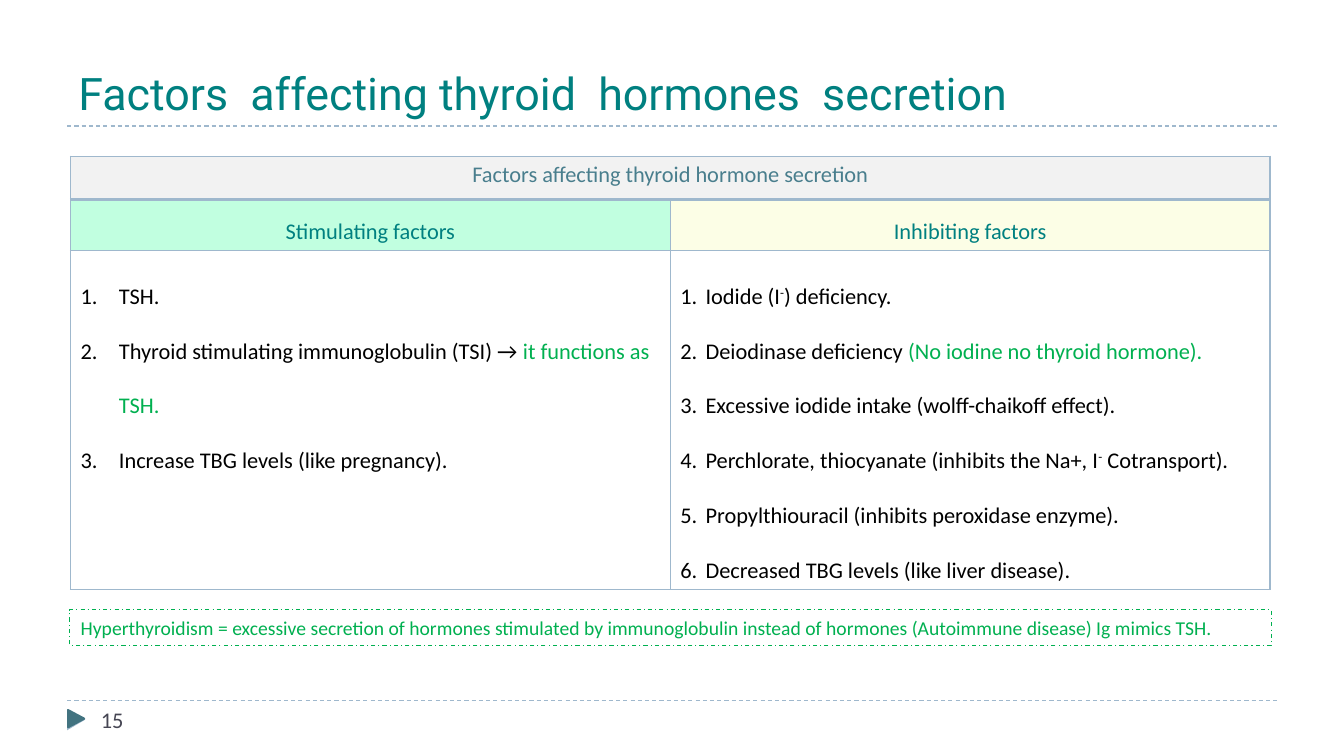
from pptx import Presentation
from pptx.dml.color import RGBColor
from pptx.enum.dml import MSO_LINE
from pptx.enum.shapes import MSO_CONNECTOR, MSO_SHAPE
from pptx.enum.text import MSO_ANCHOR, MSO_AUTO_SIZE, PP_ALIGN
from pptx.oxml.ns import qn
from pptx.util import Inches, Pt
from lxml import etree

DASH, DASH_DOT = MSO_LINE.DASH, MSO_LINE.DASH_DOT
STRAIGHT = MSO_CONNECTOR.STRAIGHT
RECTANGLE, TRIANGLE = MSO_SHAPE.RECTANGLE, MSO_SHAPE.ISOSCELES_TRIANGLE
TOP, MIDDLE, BOTTOM = MSO_ANCHOR.TOP, MSO_ANCHOR.MIDDLE, MSO_ANCHOR.BOTTOM
LEFT, CENTER = PP_ALIGN.LEFT, PP_ALIGN.CENTER

COLORS = {
    "rule": "9FB8CD", "marker": "427380", "teal": "008080", "heading": "497E8D",
    "green": "00B050", "black": "000000", "page": "464653", "white": "FFFFFF",
    "grey": "F2F2F2", "mint": "C1FFE0", "cream": "FCFEE6",
}

# The slide is a grid of 40 columns by 22.5 rows, each a third of an inch
COLUMNS, ROWS = 40, 22.5
MARGIN, CONTENT = 2, 36

# Each item is a list of spans: text, colour, superscript
STIMULATING = [
    [("TSH.",)],
    [("Thyroid stimulating immunoglobulin (TSI) → ",), ("it functions as TSH.", "green")],
    [("Increase TBG levels (like pregnancy).",)],
]
INHIBITING = [
    [("Iodide (I",), ("-", "black", True), (") deficiency.",)],
    [("Deiodinase deficiency ",), ("(No iodine no thyroid hormone).", "green")],
    [("Excessive iodide intake (wolff-chaikoff effect).",)],
    [("Perchlorate, thiocyanate (inhibits the Na+, I",), ("-", "black", True),
     (" Cotransport).",)],
    [("Propylthiouracil (inhibits peroxidase enzyme).",)],
    [("Decreased TBG levels (like liver disease).",)],
]


def grid(units):
    return Inches(units / 3)


def rgb(name):
    return RGBColor.from_string(COLORS[name])


class SlideBuilder:
    def __init__(self, page, font="Calibri", size=16):
        self.page, self.font, self.size = page, font, size

    def span(self, para, text, color="black", superscript=False, size=None, font=None):
        span = para.add_run()
        span.text = text
        span.font.name = font or self.font
        span.font.size = Pt(size or self.size)
        span.font.color.rgb = rgb(color)
        if superscript:
            span._r.get_or_add_rPr().set("baseline", "30000")

    def frame(self, frame, anchor):
        frame.word_wrap = True
        frame.vertical_anchor = anchor
        frame.margin_left = frame.margin_right = Inches(0.11)
        frame.margin_top = frame.margin_bottom = Inches(0.06)
        frame.paragraphs[0].alignment = LEFT
        return frame.paragraphs[0]

    def title(self, text, left, top, width, height):
        box = self.page.shapes.title
        box.left, box.top, box.width, box.height = map(grid, (left, top, width, height))
        para = self.frame(box.text_frame, BOTTOM)
        box.text_frame.auto_size = MSO_AUTO_SIZE.NONE
        self.span(para, text, "teal", size=32, font="Roboto")

    def rule(self, row):
        line = self.page.shapes.add_connector(
            STRAIGHT, grid(MARGIN), grid(row), grid(MARGIN + CONTENT), grid(row))
        line.line.color.rgb = rgb("rule")
        line.line.width = Pt(0.75)
        line.line.dash_style = DASH
        etree.SubElement(line._element.spPr, qn("a:effectLst"))

    def shape(self, kind, place, fill=None, line=None, width=0.75):
        shape = self.page.shapes.add_shape(kind, *map(grid, place))
        shape.shadow.inherit = False
        if fill:
            shape.fill.solid()
            shape.fill.fore_color.rgb = rgb(fill)
        else:
            shape.fill.background()
        if line:
            shape.line.color.rgb = rgb(line)
            shape.line.width = Pt(width)
        else:
            shape.line.fill.background()
        return shape

    def marker(self, place, color, line=None):
        self.shape(TRIANGLE, place, color, line, 1.5).rotation = 90

    def note(self, text, place):
        box = self.shape(RECTANGLE, place, line="green")
        box.line.dash_style = DASH_DOT
        self.span(self.frame(box.text_frame, MIDDLE), text, "green", size=14)

    def text(self, text, place, color):
        box = self.page.shapes.add_textbox(*map(grid, place))
        self.span(self.frame(box.text_frame, TOP), text, color)

    def table(self, left, top, width, heights, columns):
        holder = self.page.shapes.add_table(
            len(heights), columns, grid(left), grid(top), grid(width), grid(sum(heights)))
        table = holder.table
        table.first_row = table.horz_banding = False
        for row, height in zip(table.rows, heights):
            row.height = grid(height)
        for column in table.columns:
            column.width = grid(width / columns)
        return table

    def cell(self, cell, fill, bottom=1):
        properties = cell._tc.get_or_add_tcPr()
        for side, points in (("L", 1), ("R", 1), ("T", 1), ("B", bottom)):
            line = etree.SubElement(properties, qn(f"a:ln{side}"), w=str(Pt(points)))
            paint = etree.SubElement(line, qn("a:solidFill"))
            etree.SubElement(paint, qn("a:srgbClr"), val=COLORS["rule"])
        cell.fill.solid()
        cell.fill.fore_color.rgb = rgb(fill)

    def heading(self, cell, text, color, spacing):
        para = cell.text_frame.paragraphs[0]
        para.alignment = CENTER
        para.line_spacing = spacing
        self.span(para, text, color)

    def numbered(self, cell, items, indent):
        frame = cell.text_frame
        for index, item in enumerate(items):
            para = frame.add_paragraph() if index else frame.paragraphs[0]
            para.line_spacing = 2.0
            properties = para._p.get_or_add_pPr()
            properties.set("marL", str(Inches(indent)))
            properties.set("indent", str(-Inches(indent)))
            etree.SubElement(properties, qn("a:buFont"), typeface="+mj-lt")
            etree.SubElement(properties, qn("a:buAutoNum"), type="arabicPeriod")
            for span in item:
                self.span(para, *span)


def main():
    deck = Presentation()
    deck.slide_width, deck.slide_height = grid(COLUMNS), grid(ROWS)
    slide = SlideBuilder(deck.slides.add_slide(deck.slide_layouts[5]))

    # Rules, page marker and page number
    slide.rule(20.85)
    slide.rule(3.75)
    slide.marker((1.95, 21.15, 0.63, 0.54), "rule")
    slide.text("15", (2.67, 20.85, 8.67, 1.2), "page")
    slide.marker((2.01, 21.15, 0.51, 0.48), "marker", "marker")

    # Title
    slide.title("Factors  affecting thyroid  hormones  secretion", MARGIN, 0.51, CONTENT, 3.24)

    # Table of factors
    table = slide.table(2.1, 4.65, 35.7, (1.29, 1.52, 10.09), 2)
    table.cell(0, 0).merge(table.cell(0, 1))
    slide.heading(table.cell(0, 0), "Factors affecting thyroid hormone secretion", "heading", 1.0)
    factors = (
        ("Stimulating factors", "mint", STIMULATING, 0.38),
        ("Inhibiting factors", "cream", INHIBITING, 0.25),
    )
    for column, (name, fill, items, indent) in enumerate(factors):
        top, head, body = (table.cell(row, column) for row in range(3))
        slide.cell(top, "grey", bottom=2)
        slide.cell(head, fill)
        slide.heading(head, name, "teal", 1.5)
        slide.cell(body, "white")
        slide.numbered(body, items, indent)

    # Closing note
    slide.note("Hyperthyroidism = excessive secretion of hormones stimulated by immunoglobulin "
               "instead of hormones (Autoimmune disease) Ig mimics TSH.",
               (2.07, 18.15, 35.76, 1.05))

    deck.save("out.pptx")


if __name__ == "__main__":
    main()
